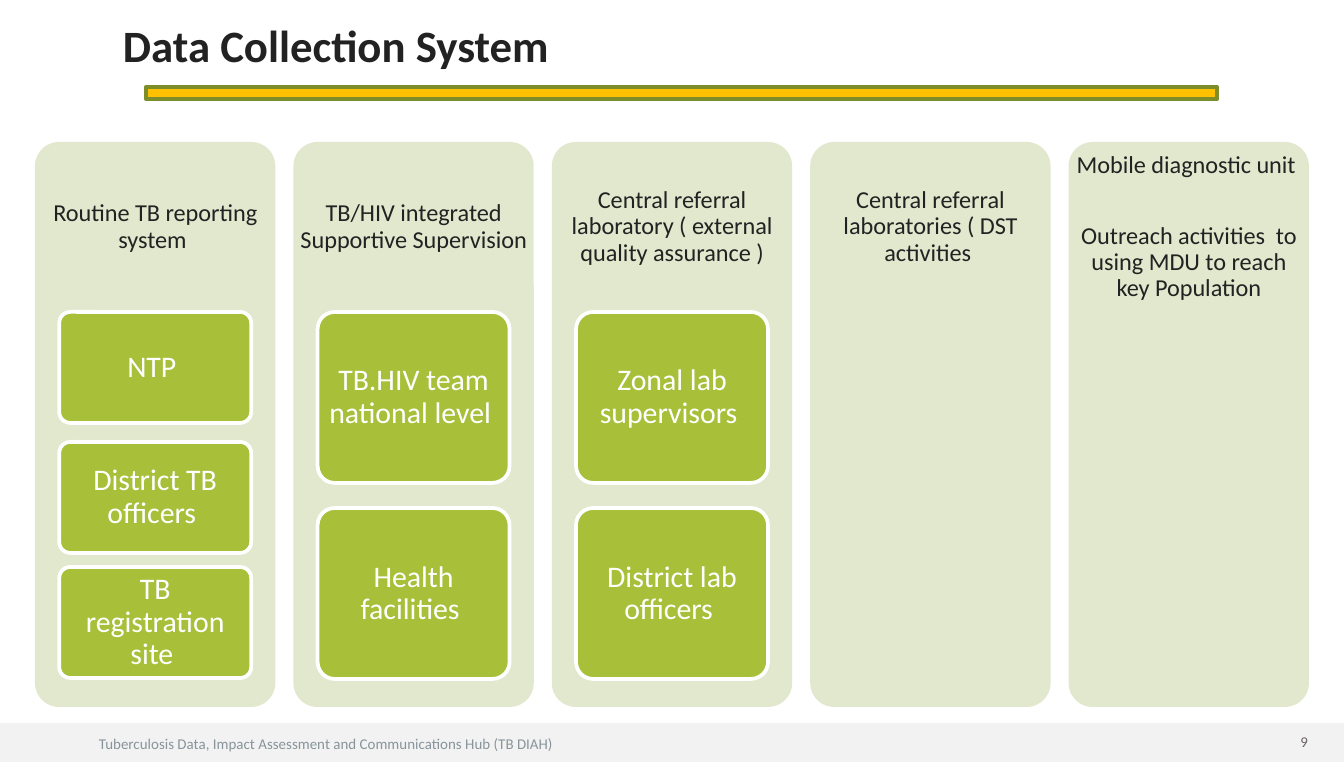
"""Build the Data Collection System slide."""
from pptx import Presentation
from pptx.dml.color import RGBColor
from pptx.enum.shapes import MSO_SHAPE
from pptx.enum.text import MSO_ANCHOR, PP_ALIGN
from pptx.util import Emu, Pt

SCALE = 914400 / 134.4
FONT = "Calibri"
DARK, WHITE, PANEL, GREEN = "222222", "FFFFFF", "E1E8CE", "A7BF39"

TITLE = "Data Collection System"
FOOTER = "Tuberculosis Data, Impact Assessment and Communications Hub (TB DIAH)"
PAGE_NUMBER = "9"
COLUMNS = [
    (["Routine TB reporting system "],
     ["NTP ", "District TB officers ", "TB registration site "]),
    (["TB/HIV integrated Supportive Supervision "],
     ["TB.HIV team national level ", "Health facilities "]),
    (["Central referral laboratory ( external quality assurance )"],
     ["Zonal lab supervisors ", "District lab officers "]),
    (["Central referral laboratories ( DST activities "], []),
    (["Mobile diagnostic unit ",
      "Outreach activities  to using MDU to reach key Population"], []),
]
CARD_ROWS = {0: (0, []), 2: (171, [312, 508]), 3: (111, [312, 442, 567])}

SLIDE_WIDTH, SLIDE_HEIGHT = 1344, 762
PANEL_LEFT, PANEL_RIGHT, PANEL_GAP = 35, 1309, 18
PANEL_TOP, PANEL_HEIGHT, HEADING_HEIGHT = 142, 565, 170
CARD_WIDTH = 192


def px(length):
    return Emu(round(length * SCALE))


def color(value):
    return RGBColor.from_string(value)


def write(shape, lines, size, text_color, align=PP_ALIGN.LEFT, anchor=MSO_ANCHOR.MIDDLE,
          insets=(13, 7), spacing=1.0, gap=0, bold=False):
    frame = shape.text_frame
    frame.word_wrap = True
    frame.vertical_anchor = anchor
    frame.margin_left = frame.margin_right = px(insets[0])
    frame.margin_top = frame.margin_bottom = px(insets[1])
    frame.text = "\n".join(lines)
    for paragraph in frame.paragraphs:
        paragraph.alignment = align
        paragraph.line_spacing = spacing
        for run in paragraph.runs:
            run.font.name = FONT
            run.font.size = Pt(size)
            run.font.bold = bold
            run.font.color.rgb = color(text_color)
    for paragraph in frame.paragraphs[1:]:
        paragraph.space_before = Pt(gap)


def add_text(slide, box, lines, size, text_color, **style):
    write(slide.shapes.add_textbox(*map(px, box)), lines, size, text_color, **style)


def add_block(slide, kind, box, fill, line=None):
    shape = slide.shapes.add_shape(kind, *map(px, box))
    shape.shadow.inherit = False
    shape.fill.solid()
    shape.fill.fore_color.rgb = color(fill)
    if line:
        shape.line.color.rgb = color(line)
        shape.line.width = Pt(2)
    else:
        shape.line.fill.background()
    if kind == MSO_SHAPE.ROUNDED_RECTANGLE:
        shape.adjustments[0] = 0.1
    return shape


def add_column(slide, left, width, heading, cards):
    rounded = MSO_SHAPE.ROUNDED_RECTANGLE
    add_block(slide, rounded, (left, PANEL_TOP, width, PANEL_HEIGHT), PANEL)
    add_text(slide, (left, PANEL_TOP, width, HEADING_HEIGHT), heading, 13, DARK,
             align=PP_ALIGN.CENTER, insets=(7, 7), spacing=0.9, gap=24)
    card_left = left + (width - CARD_WIDTH) / 2
    card_height, tops = CARD_ROWS[len(cards)]
    for top, label in zip(tops, cards):
        card = add_block(slide, rounded, (card_left, top, CARD_WIDTH, card_height), GREEN, WHITE)
        write(card, [label], 16, WHITE, align=PP_ALIGN.CENTER, insets=(5, 4), spacing=0.9)


def main():
    presentation = Presentation()
    presentation.slide_width = px(SLIDE_WIDTH)
    presentation.slide_height = px(SLIDE_HEIGHT)
    slide = presentation.slides.add_slide(presentation.slide_layouts[6])

    add_block(slide, MSO_SHAPE.RECTANGLE, (0, 723, SLIDE_WIDTH, 39), "F2F2F2")
    add_text(slide, (86, 728, 672, 32), [FOOTER], 8, "879499", anchor=MSO_ANCHOR.TOP)
    add_text(slide, (110, 11, 1142, 67), [TITLE], 24, DARK, anchor=MSO_ANCHOR.BOTTOM, bold=True)

    count = len(COLUMNS)
    width = (PANEL_RIGHT - PANEL_LEFT - PANEL_GAP * (count - 1)) / count
    for index, (heading, cards) in enumerate(COLUMNS):
        add_column(slide, PANEL_LEFT + index * (width + PANEL_GAP), width, heading, cards)

    add_block(slide, MSO_SHAPE.MATH_MINUS, (-47, 67, 1457, 52), "FFC000", "7C8D2A")
    add_text(slide, (1008, 725, 313, 32), [PAGE_NUMBER], 8, "6C6463", align=PP_ALIGN.RIGHT)
    presentation.save("out.pptx")


if __name__ == "__main__":
    main()
